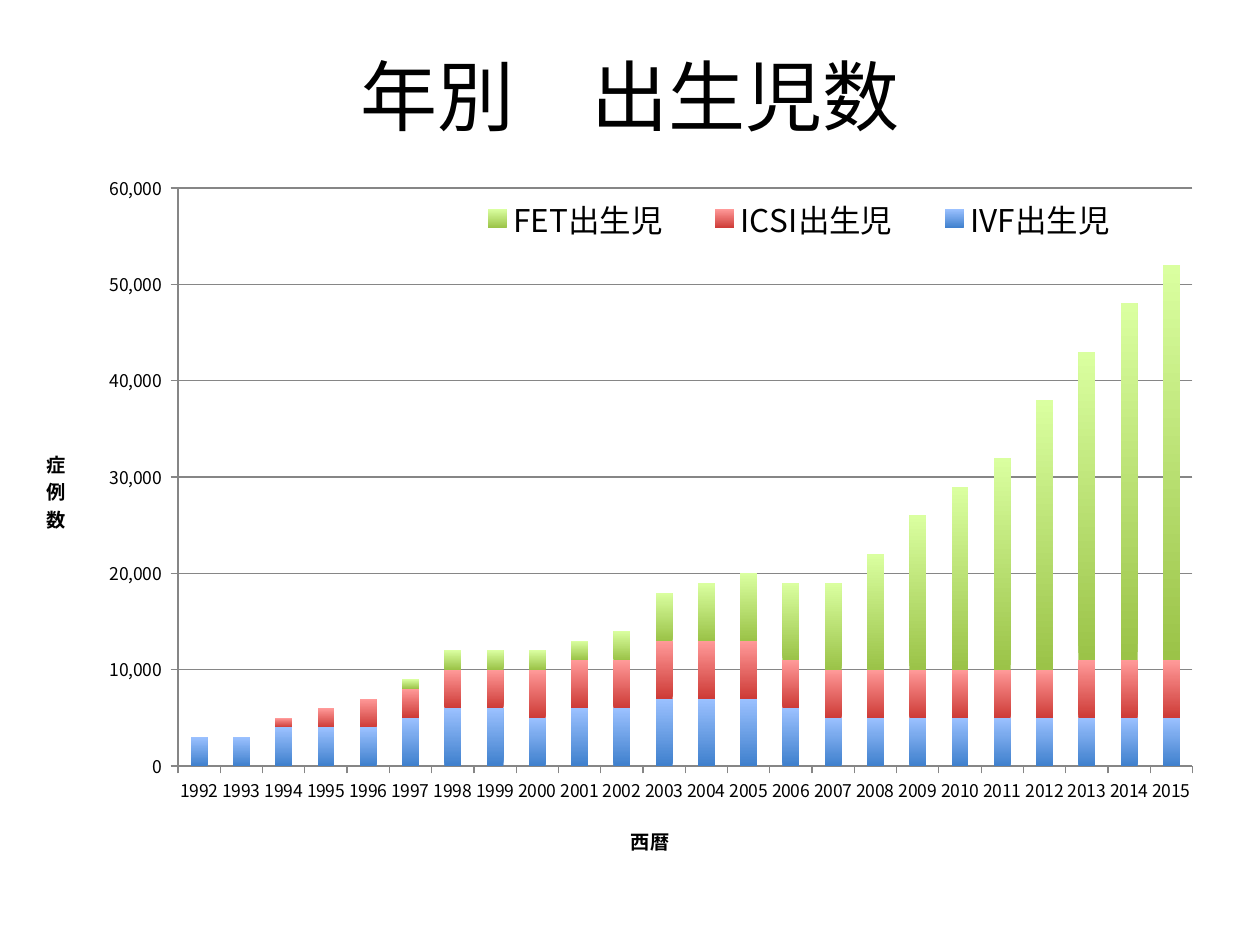
"""Build a slide with a stacked column chart of births per year."""
from lxml import etree
from pptx import Presentation
from pptx.chart.data import CategoryChartData
from pptx.dml.color import RGBColor
from pptx.enum.chart import XL_CHART_TYPE, XL_LEGEND_POSITION, XL_TICK_MARK
from pptx.enum.text import MSO_ANCHOR, PP_ALIGN
from pptx.oxml.ns import qn
from pptx.util import Cm, Pt

STACKED = XL_CHART_TYPE.COLUMN_STACKED
RIGHT = XL_LEGEND_POSITION.RIGHT
OUTSIDE = XL_TICK_MARK.OUTSIDE
MIDDLE = MSO_ANCHOR.MIDDLE
CENTER = PP_ALIGN.CENTER

TITLE = "年別　出生児数"
FONT = "Noto Sans CJK JP"
YEARS = [str(year) for year in range(1992, 2016)]
SERIES = [
    ("IVF出生児", "blue",
     [3000, 3000, 4000, 4000, 4000, 5000, 6000, 6000, 5000, 6000, 6000, 7000,
      7000, 7000, 6000, 5000, 5000, 5000, 5000, 5000, 5000, 5000, 5000, 5000]),
    ("ICSI出生児", "red",
     [0, 0, 1000, 2000, 3000, 3000, 4000, 4000, 5000, 5000, 5000, 6000,
      6000, 6000, 5000, 5000, 5000, 5000, 5000, 5000, 5000, 6000, 6000, 6000]),
    ("FET出生児", "green",
     [0, 0, 0, 0, 0, 1000, 2000, 2000, 2000, 2000, 3000, 5000,
      6000, 7000, 8000, 9000, 12000, 16000, 19000, 22000, 28000, 32000, 37000, 41000]),
]
COLORS = {
    "text": "000000", "line": "868686",
    "blue": ("3F80CD", "9BC1FF"),
    "red": ("CE3B37", "FF9A99"),
    "green": ("9BC348", "DAFFA0"),
}


def rgb(value):
    return RGBColor.from_string(value)


def style(font, size, bold=False):
    font.size = Pt(size)
    font.bold = bold
    font.color.rgb = rgb(COLORS["text"])
    font.name = FONT
    etree.SubElement(font._rPr, qn("a:ea")).set("typeface", FONT)


def draw_line(line):
    line.color.rgb = rgb(COLORS["line"])
    line.width = Pt(0.7)


def place(element, index, inner=False, **percents):
    for old in element.findall(qn("c:layout")):
        element.remove(old)
    layout = etree.Element(qn("c:layout"))
    manual = etree.SubElement(layout, qn("c:manualLayout"))
    settings = [("layoutTarget", "inner")] if inner else []
    settings += [("xMode", "edge"), ("yMode", "edge")]
    settings += [(tag, round(value / 100, 4)) for tag, value in percents.items()]
    for tag, value in settings:
        etree.SubElement(manual, qn(f"c:{tag}")).set("val", str(value))
    element.insert(index, layout)


def format_axis(axis, title, x, y):
    axis.major_tick_mark = OUTSIDE
    draw_line(axis.format.line)
    style(axis.tick_labels.font, 10)
    tf = axis.axis_title.text_frame
    tf.text = title
    style(tf.paragraphs[0].runs[0].font, 11, True)
    place(axis.axis_title._element, 1, x=x, y=y)
    return tf


def add_title(s):
    tf = s.shapes.add_textbox(Cm(1.27), Cm(0.76), Cm(22.86), Cm(2.31)).text_frame
    tf.word_wrap = True
    tf.vertical_anchor = MIDDLE
    tf.text = TITLE
    p = tf.paragraphs[0]
    p.alignment = CENTER
    style(p.runs[0].font, 44)


def add_births_chart(s):
    data = CategoryChartData(number_format="#,##0")
    data.categories = YEARS
    for name, _, values in SERIES:
        data.add_series(name, values)
    chart = s.shapes.add_chart(STACKED, Cm(0.84), Cm(3.3), Cm(23.7), Cm(14.05), data).chart
    chart.has_title = False
    chart.font.name = "Calibri"
    chart.font.size = Pt(10)
    place(chart._chartSpace.chart.plotArea, 0, True, x=11.6, y=3.5, w=86.3, h=83.2)

    plot = chart.plots[0]
    plot.gap_width = 150
    plot.overlap = 100
    plot.vary_by_categories = False
    for series, (_, color, _) in zip(plot.series, SERIES):
        fill = series.format.fill
        fill.gradient()
        fill.gradient_angle = 90
        for stop, shade in zip(fill.gradient_stops, COLORS[color]):
            stop.color.rgb = rgb(shade)

    format_axis(chart.category_axis, "西暦", 49.8, 94.7)
    values = chart.value_axis
    tf = format_axis(values, "症例数", 0.1, 40.4)
    body = tf._txBody.find(qn("a:bodyPr"))
    body.set("rot", "0")
    body.set("vert", "wordArtVertRtl")
    values.minimum_scale, values.maximum_scale, values.major_unit = 0, 60000, 10000
    values.tick_labels.number_format = r"#,##0_);[Red]\(#,##0\)"
    values.tick_labels.number_format_is_linked = False
    draw_line(values.major_gridlines.format.line)

    chart.has_legend = True
    legend = chart.legend
    legend.position = RIGHT
    legend.include_in_layout = False
    style(legend.font, 18)
    place(legend._element, 1, x=34.4, y=3.4, w=60, h=9)


def main():
    prs = Presentation()
    prs.slide_width, prs.slide_height = Cm(25.4), Cm(19.05)
    s = prs.slides.add_slide(prs.slide_layouts[6])
    add_title(s)
    add_births_chart(s)
    prs.save("out.pptx")


if __name__ == "__main__":
    main()
